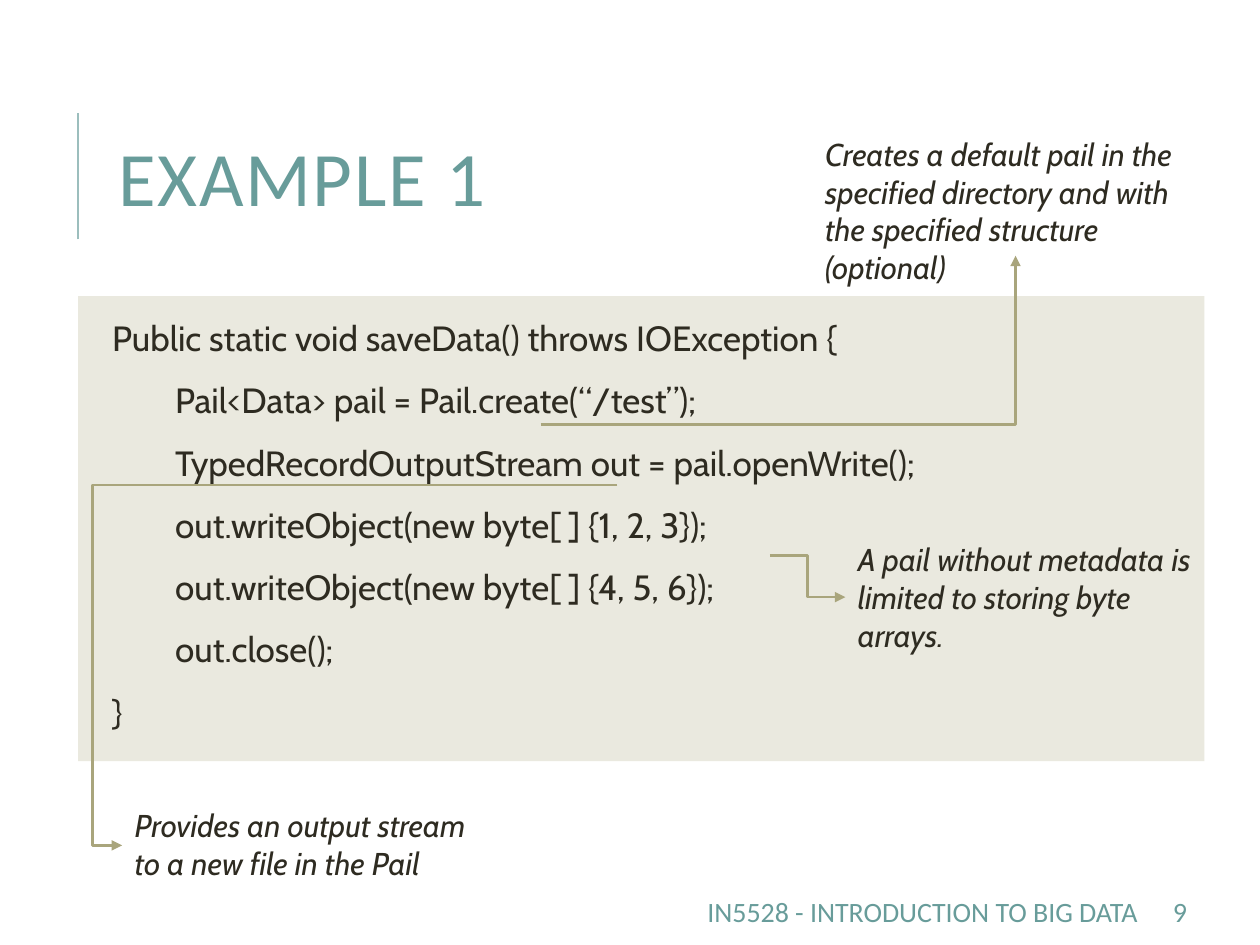
from lxml import etree
from pptx import Presentation
from pptx.dml.color import RGBColor
from pptx.enum.shapes import MSO_CONNECTOR as CXN, MSO_SHAPE as SHAPE
from pptx.enum.text import MSO_ANCHOR as ANCHOR, PP_ALIGN as ALIGN
from pptx.oxml.ns import qn
from pptx.util import Inches, Pt

TEAL, PALE_TEAL, OLIVE, INK = "689C9A", "9CBEBD", "A9A57C", "2E2B21"


def rgb(value):
    return RGBColor.from_string(value)


class Deck:
    heading_font, body_font = "Calibri", "Cabin"

    def __init__(self, width, height):
        self.prs = Presentation()
        self.prs.slide_width, self.prs.slide_height = Inches(width), Inches(height)
        self.s = self.prs.slides.add_slide(self.prs.slide_layouts[6])

    def text(self, box, lines, size, color, font, italic=False, align=ALIGN.LEFT,
             anchor=ANCHOR.TOP, inset=None, spacing=None, before=0, after=0):
        tf = self.s.shapes.add_textbox(*map(Inches, box)).text_frame
        tf.word_wrap, tf.vertical_anchor = True, anchor
        if inset is not None:
            tf.margin_left = tf.margin_right = Inches(inset)
            tf.margin_top = tf.margin_bottom = Inches(inset)
        for i, line in enumerate(lines):
            p = tf.add_paragraph() if i else tf.paragraphs[0]
            p.add_run().text = line
            p.alignment = align
            p.line_spacing = spacing
            p.space_before, p.space_after = Pt(before if i else 0), Pt(after)
            p.font.size, p.font.name, p.font.italic = Pt(size), font, italic
            p.font.color.rgb = rgb(color)
        return tf

    def title(self, box, text):
        tf = self.text(box, [text], 44, TEAL, self.heading_font,
                       anchor=ANCHOR.MIDDLE, spacing=0.8)
        r = tf.paragraphs[0].runs[0]
        r.font._element.set("spc", "100")

    def footer(self, box, text, align=ALIGN.LEFT):
        self.text(box, [text], 16, TEAL, self.heading_font, align=align,
                  anchor=ANCHOR.MIDDLE)

    def code(self, box, lines):
        self.text(box, lines, 20, INK, self.body_font, inset=0.05,
                  spacing=0.9, before=12, after=2)

    def note(self, box, text):
        self.text(box, [text], 18, INK, self.body_font, italic=True)

    def panel(self, box, color, opacity):
        sp = self.s.shapes.add_shape(SHAPE.RECTANGLE, *map(Inches, box))
        sp.shadow.inherit = False
        sp.fill.solid()
        sp.fill.fore_color.rgb = rgb(color)
        sp.line.fill.background()
        clr = sp._element.spPr.find(".//" + qn("a:srgbClr"))
        etree.SubElement(clr, qn("a:alpha"), val=str(opacity * 1000))

    def line(self, start, end, color, kind=CXN.STRAIGHT):
        cxn = self.s.shapes.add_connector(kind, *map(Inches, start + end))
        cxn.line.color.rgb, cxn.line.width = rgb(color), Pt(1.5)
        etree.SubElement(cxn._element.spPr, qn("a:effectLst"))
        return cxn

    def bent_arrow(self, start, end, preset="bentConnector3", bend=None):
        cxn = self.line(start, end, OLIVE, CXN.ELBOW)
        etree.SubElement(cxn.line._get_or_add_ln(), qn("a:tailEnd"), type="triangle")
        geom = cxn._element.spPr.find(qn("a:prstGeom"))
        geom.set("prst", preset)
        if bend is not None:
            etree.SubElement(geom.find(qn("a:avLst")), qn("a:gd"), name="adj1",
                             fmla=f"val {round(bend * 100000)}")


def main():
    deck = Deck(10, 7.5)

    # Title and footer
    deck.line((0.62, 1.9), (0.62, 0.9), PALE_TEAL)
    deck.title((0.84, 0.64, 7.97, 1.64), "EXAMPLE 1")
    deck.footer((4.29, 7.08, 4.84, 0.3), "IN5528 - INTRODUCTION TO BIG DATA", ALIGN.RIGHT)
    deck.footer((9.21, 7.08, 0.8, 0.3), "9")

    # Code listing
    deck.panel((0.62, 2.35, 8.94, 3.69), OLIVE, 24)
    deck.code((0.84, 2.5, 8.9, 3.54), [
        "Public static void saveData() throws IOException {",
        "\tPail<Data> pail = Pail.create(“/test”);",
        "\tTypedRecordOutputStream out = pail.openWrite();",
        "\tout.writeObject(new byte[ ] {1, 2, 3});",
        "\tout.writeObject(new byte[ ] {4, 5, 6});",
        "\tout.close();",
        "}",
    ])

    # Notes, each with the arrow leading to it
    deck.note((6.45, 1.02, 3.22, 1.01), "Creates a default pail in the specified directory "
              "and with the specified structure (optional)")
    deck.bent_arrow((4.29, 3.37), (8.06, 2.03), "bentConnector2")
    deck.note((0.97, 6.35, 2.94, 0.71), "Provides an output stream to a new file in the Pail")
    deck.bent_arrow((4.9, 3.85), (0.97, 6.71), bend=1.06)
    deck.note((6.71, 4.24, 3.03, 1.01),
              "A pail without metadata is limited to storing byte arrays.")
    deck.bent_arrow((6.11, 4.41), (6.71, 4.74), bend=0.5)

    deck.prs.save("out.pptx")


if __name__ == "__main__":
    main()
